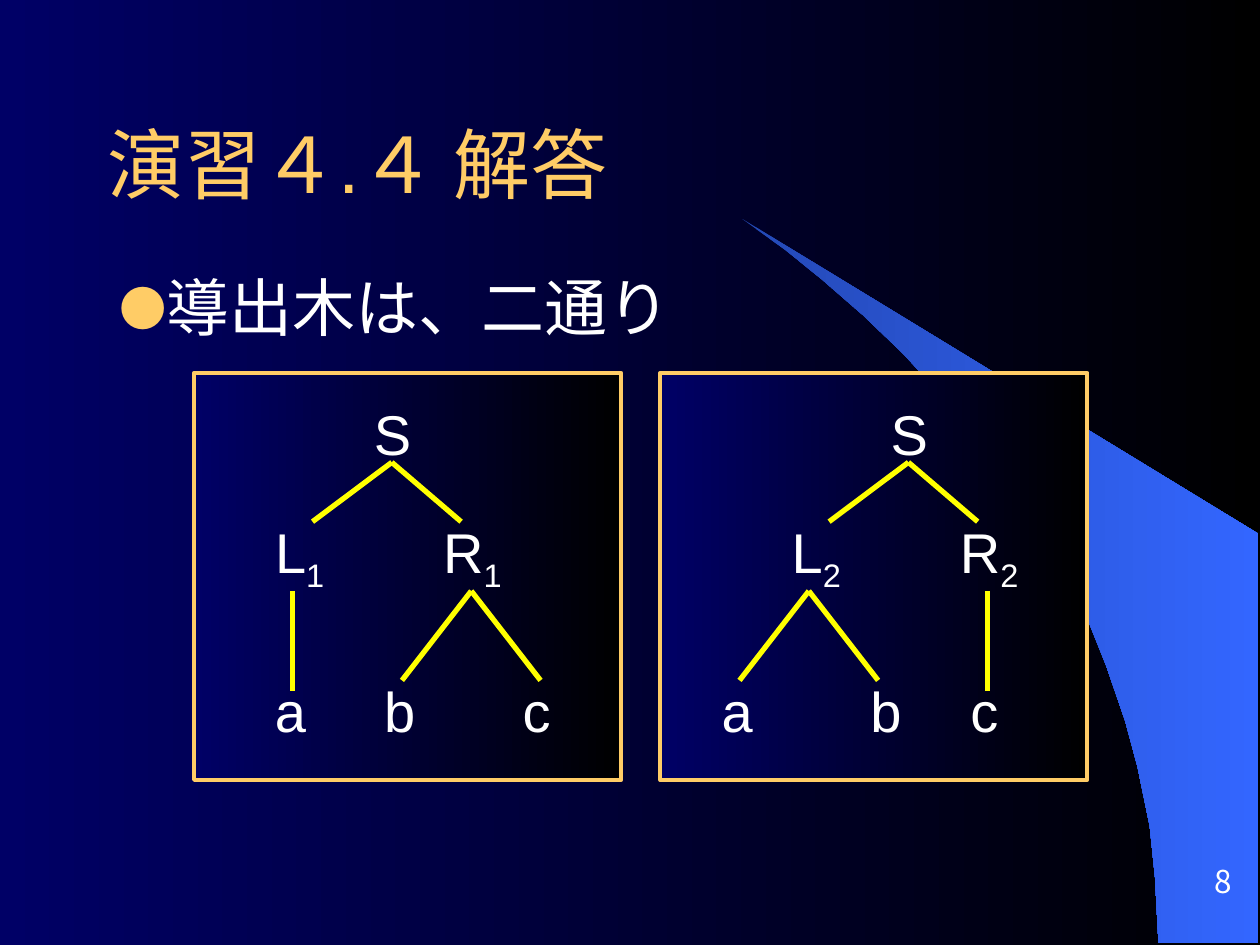
from dataclasses import dataclass
from typing import NamedTuple

from lxml import etree
from pptx import Presentation
from pptx.dml.color import RGBColor
from pptx.enum.shapes import MSO_CONNECTOR, MSO_SHAPE
from pptx.enum.text import MSO_ANCHOR, PP_ALIGN
from pptx.oxml.ns import qn
from pptx.util import Pt

RECTANGLE = MSO_SHAPE.RECTANGLE
STRAIGHT = MSO_CONNECTOR.STRAIGHT
LEFT, RIGHT = PP_ALIGN.LEFT, PP_ALIGN.RIGHT
TOP, MIDDLE, BOTTOM = MSO_ANCHOR.TOP, MSO_ANCHOR.MIDDLE, MSO_ANCHOR.BOTTOM


@dataclass(frozen=True)
class Theme:
    latin: str = "Arial"
    japanese: str = "Noto Sans CJK JP"
    night: tuple = ("000066", "000000")
    swoosh: tuple = ("2449B6", "3366FF")
    gold: str = "FFCC66"
    text: str = "FFFFFF"
    branch: str = "FFFF00"
    title_size: float = 44
    body_size: float = 36
    node_size: float = 32
    number_size: float = 18


class Box(NamedTuple):
    left: float
    top: float
    width: float
    height: float


class Fork(NamedTuple):
    x: float
    leaves: tuple
    label_offsets: tuple


class Single(NamedTuple):
    x: float
    leaf: str


@dataclass(frozen=True)
class DerivationTree:
    index: str
    panel_left: float
    root_left: float
    fork: Fork
    single: Single


THEME = Theme()
TREES = (
    DerivationTree("1", 110.9, 206.6, Fork(269.3, ("b", "c"), (-56.9, 22.3)),
                   Single(167, "a")),
    DerivationTree("2", 377.3, 501.8, Fork(462.2, ("a", "b"), (-56.9, 28.1)),
                   Single(564.5, "c")),
)
# Levels shared by both trees
ROOT_TOP, CHILD_TOP, LEAF_TOP = 224.6, 292.3, 383
ROOT_JOINT, CHILD_EDGE = 264.2, 298.1
CHILD_JOINT, FORK_END, SINGLE_END = 337.7, 388.8, 394.6
FORK_SPREAD = 39.6

SWOOSH_POINTS = (
    (662.4, 538.6), (719.3, 539.3), (719.3, 304.6), (424.1, 124.6), (449.3, 143.3),
    (470.2, 159.8), (493.2, 180), (515.5, 201.6), (548.6, 237.6), (578.2, 276.5),
    (599, 310.3), (617.8, 344.9), (632.2, 380.2), (643, 411.8), (650.2, 438.5),
    (657.4, 472.3), (660.2, 501.1),
)


def apply(target, values: dict) -> None:
    for name, value in values.items():
        setattr(target, name, value)


def place(shape, box: Box) -> None:
    apply(shape, {name: Pt(value) for name, value in box._asdict().items()})


def fill_gradient(fill, colours: tuple) -> None:
    fill.gradient()
    fill.gradient_angle = 0
    for stop, colour in zip(fill.gradient_stops, colours):
        stop.color.rgb = RGBColor.from_string(colour)
        stop.position = colours.index(colour)


def add_run(paragraph, text: str, size: float, colour: str, font: str):
    run = paragraph.add_run()
    run.text = text
    apply(run.font, {"size": Pt(size), "name": font, "bold": False})
    run.font.color.rgb = RGBColor.from_string(colour)
    east_asian = etree.SubElement(run.font._element, qn("a:ea"))
    east_asian.set("typeface", THEME.japanese)
    return run


def format_frame(frame, anchor=TOP, side: float = 7.2, edge: float = 3.6,
                 wrap: bool = True) -> None:
    apply(frame, {
        "word_wrap": wrap, "vertical_anchor": anchor,
        "margin_left": Pt(side), "margin_right": Pt(side),
        "margin_top": Pt(edge), "margin_bottom": Pt(edge),
    })


def add_text(slide, box: Box, **frame_format):
    frame = slide.shapes.add_textbox(*map(Pt, box)).text_frame
    format_frame(frame, **frame_format)
    return frame.paragraphs[0]


def space_before(paragraph, percent: int):
    properties = paragraph._p.get_or_add_pPr()
    spacing = etree.SubElement(properties, qn("a:spcBef"))
    etree.SubElement(spacing, qn("a:spcPct")).set("val", str(percent * 1000))
    return properties


def add_bullet(properties) -> None:
    properties.set("marL", str(Pt(27)))
    properties.set("indent", str(Pt(-27)))
    colour = etree.SubElement(properties, qn("a:buClr"))
    etree.SubElement(colour, qn("a:srgbClr")).set("val", THEME.gold)
    for tag, key, value in (("a:buSzPct", "val", "75000"),
                            ("a:buFont", "typeface", THEME.japanese),
                            ("a:buChar", "char", "●")):
        etree.SubElement(properties, qn(tag)).set(key, value)


def add_node(slide, left: float, top: float, width: float, symbol: str,
             subscript: str = "") -> None:
    paragraph = add_text(slide, Box(left, top, width, 45.4))
    space_before(paragraph, 50)
    style = (THEME.node_size, THEME.text, THEME.latin)
    add_run(paragraph, symbol, *style)
    if subscript:
        run = add_run(paragraph, subscript, *style)
        run.font._element.set("baseline", "-25000")


def add_branch(slide, x1: float, y1: float, x2: float, y2: float) -> None:
    branch = slide.shapes.add_connector(STRAIGHT, *map(Pt, (x1, y1, x2, y2)))
    branch.line.width = Pt(3)
    branch.line.color.rgb = RGBColor.from_string(THEME.branch)
    etree.SubElement(branch._element.spPr, qn("a:effectLst"))


def add_panel(slide, left: float) -> None:
    panel = slide.shapes.add_shape(RECTANGLE, *map(Pt, (left, 213.1, 244.1, 232.6)))
    panel.shadow.inherit = False
    fill_gradient(panel.fill, THEME.night)
    panel.line.width = Pt(2.25)
    panel.line.color.rgb = RGBColor.from_string(THEME.gold)


def add_tree(slide, tree: DerivationTree) -> None:
    # Root and its two children
    root, fork, single = tree.root_left, tree.fork, tree.single
    add_node(slide, root, ROOT_TOP, 39.6, "S")
    for symbol, label_offset, edge_offset in (("L", -56.5, -28), ("R", 39.6, 56.9)):
        add_node(slide, root + label_offset, CHILD_TOP, 62.6, symbol, tree.index)
        add_branch(slide, root + 17.3, ROOT_JOINT, root + edge_offset, CHILD_EDGE)
    # Child with two leaves
    for leaf, offset, side in zip(fork.leaves, fork.label_offsets, (-1, 1)):
        add_branch(slide, fork.x, CHILD_JOINT, fork.x + side * FORK_SPREAD, FORK_END)
        add_node(slide, fork.x + offset, LEAF_TOP, 33.8, leaf)
    # Child with one leaf
    add_branch(slide, single.x, CHILD_JOINT, single.x, SINGLE_END)
    add_node(slide, single.x - 17, LEAF_TOP, 33.8, single.leaf)


def main() -> None:
    deck = Presentation()
    apply(deck, {"slide_width": Pt(720), "slide_height": Pt(540)})
    slide = deck.slides.add_slide(deck.slide_layouts[5])

    # Background and swoosh
    fill_gradient(slide.background.fill, THEME.night)
    start, *rest = SWOOSH_POINTS
    builder = slide.shapes.build_freeform(*start, scale=float(Pt(1)))
    builder.add_line_segments(rest, close=True)
    swoosh = builder.convert_to_shape()
    swoosh.shadow.inherit = False
    fill_gradient(swoosh.fill, THEME.swoosh)
    swoosh.line.fill.background()

    # Title
    title = slide.shapes.title
    place(title, Box(54, 48.2, 636.5, 90))
    format_frame(title.text_frame, anchor=MIDDLE)
    heading = title.text_frame.paragraphs[0]
    heading.alignment = LEFT
    add_run(heading, "演習４.４ 解答", THEME.title_size, THEME.gold, THEME.latin)

    # Statement
    statement = add_text(slide, Box(54, 145.4, 612, 67.7), side=14.4)
    statement.line_spacing = 1.1
    add_bullet(space_before(statement, 20))
    add_run(statement, "導出木は、二通り", THEME.body_size, THEME.text, THEME.japanese)

    # Derivation trees
    for tree in TREES:
        add_panel(slide, tree.panel_left)
        add_tree(slide, tree)

    # Page number
    number = add_text(slide, Box(637.9, 483.8, 73.4, 30.2), anchor=BOTTOM, edge=0, wrap=False)
    number.alignment = RIGHT
    add_run(number, "8", THEME.number_size, THEME.text, THEME.japanese)

    deck.save("out.pptx")


if __name__ == "__main__":
    main()
